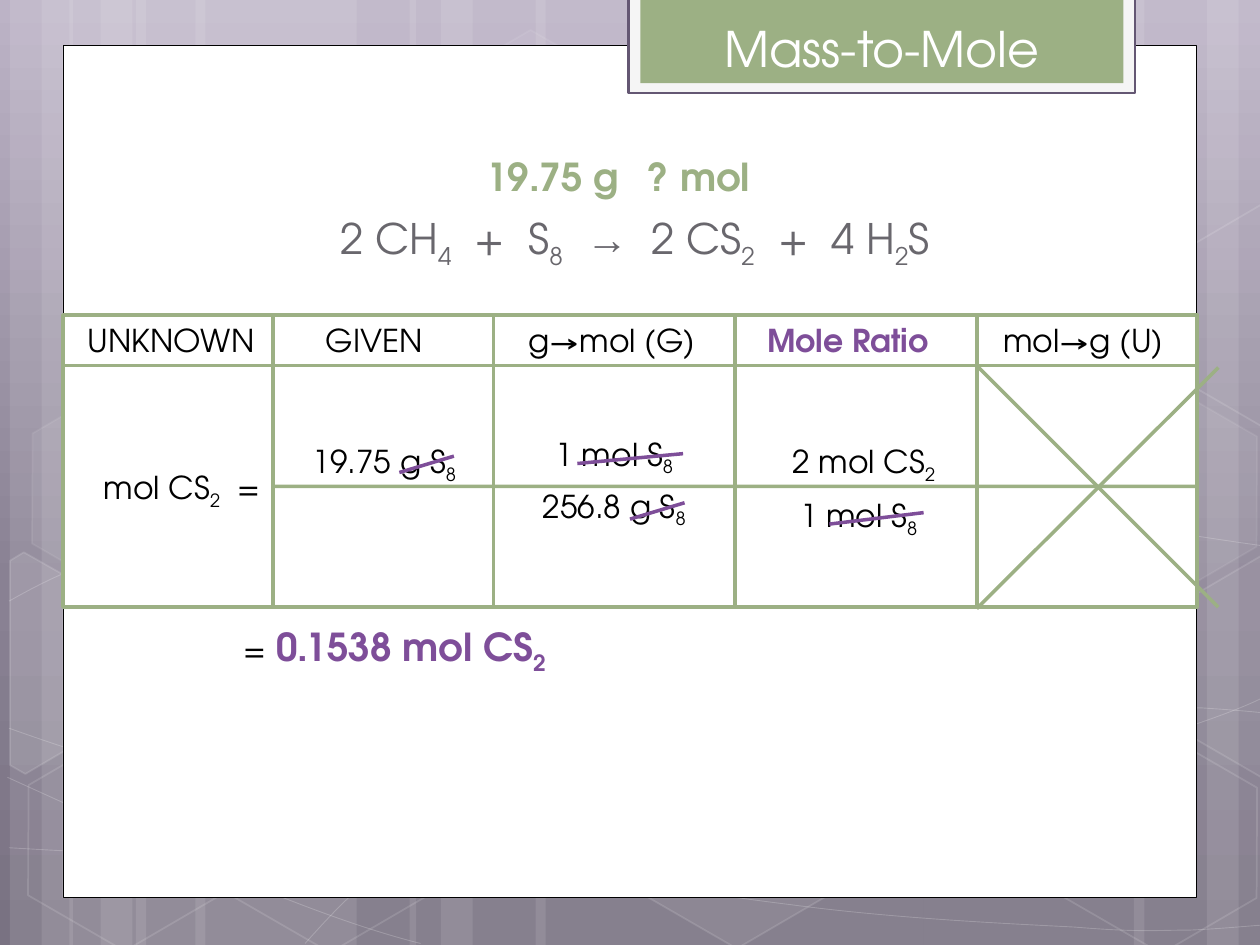
from copy import deepcopy
from math import cos, radians, sin
from pptx import Presentation
from pptx.dml.color import RGBColor
from pptx.enum.shapes import MSO_CONNECTOR, MSO_SHAPE as SHAPE
from pptx.enum.text import MSO_ANCHOR as ANCHOR, MSO_AUTO_SIZE as AUTO, PP_ALIGN as ALIGN
from pptx.oxml.ns import qn
from pptx.util import Cm, Pt
from lxml.etree import SubElement

FONT = "TeX Gyre Adventor"
GREEN, PURPLE, GREY, WHITE, BLACK = "9CB084", "7E4E99", "69676D", "FFFFFF", "000000"


def rgb(value):
    return RGBColor.from_string(value)


def set_alpha(fill, percent):
    color = fill._xPr.find(".//" + qn("a:srgbClr"))
    SubElement(color, qn("a:alpha"), val=str(percent * 1000))


def style(sp, fill=None, alpha=None, line=None, width=1, line_alpha=None):
    sp.shadow.inherit = False
    if fill:
        sp.fill.solid()
        sp.fill.fore_color.rgb = rgb(fill)
        if alpha:
            set_alpha(sp.fill, alpha)
    else:
        sp.fill.background()
    if line:
        sp.line.color.rgb = rgb(line)
        sp.line.width = Pt(width)
        if line_alpha:
            set_alpha(sp.line.fill, line_alpha)
    else:
        sp.line.fill.background()
    return sp


def add_box(s, x, y, w, h, kind=SHAPE.RECTANGLE, **fmt):
    return style(s.shapes.add_shape(kind, Cm(x), Cm(y), Cm(w), Cm(h)), **fmt)


def add_path(s, points, close=False, **fmt):
    points = [(Cm(x), Cm(y)) for x, y in points]
    builder = s.shapes.build_freeform(*points[0])
    builder.add_line_segments(points[1:], close=close)
    return style(builder.convert_to_shape(), **fmt)


def add_curve(s, points, **fmt):
    sp = add_path(s, points, **fmt)
    outline = sp._element.find(".//" + qn("a:path"))
    lines = outline.findall(qn("a:lnTo"))
    for i in range(0, len(lines), 3):
        curve = SubElement(outline, qn("a:cubicBezTo"))
        for line in lines[i:i + 3]:
            curve.append(line[0])
            outline.remove(line)


def add_turned(s, points, cx, cy, angle=30, **fmt):
    c, n = cos(radians(angle)), sin(radians(angle))
    level = [(cx + (x - cx) * c + (y - cy) * n, cy - (x - cx) * n + (y - cy) * c) for x, y in points]
    add_path(s, level, close=True, **fmt).rotation = angle


def add_line(s, x1, y1, x2, y2, color=GREEN):
    line = s.shapes.add_connector(MSO_CONNECTOR.STRAIGHT, Cm(x1), Cm(y1), Cm(x2), Cm(y2))
    line.line.color.rgb = rgb(color)
    line.line.width = Pt(2)
    SubElement(line._element.spPr, qn("a:effectLst"))
    return line


def write(p, text, size=18, color=BLACK, bold=False, font=FONT):
    for i, part in enumerate(text.split("_")):
        if part:
            r = p.add_run()
            r.text = part
            r.font.size, r.font.bold, r.font.name = Pt(size), bold, font
            r.font.color.rgb = rgb(color)
            if i % 2:
                r.font._element.set("baseline", "-25000")


def add_text(s, x, y, w, h, text="", align=ALIGN.CENTER, **fmt):
    tf = s.shapes.add_textbox(Cm(x), Cm(y), Cm(w), Cm(h)).text_frame
    tf.word_wrap = True
    tf.auto_size = AUTO.SHAPE_TO_FIT_TEXT
    p = tf.paragraphs[0]
    p.alignment = align
    write(p, text, **fmt)
    return tf


def draw_gradient(s):
    fill = s.background.fill
    fill.gradient()
    fill.gradient_angle = 270
    first, last = fill.gradient_stops
    first.color.rgb, last.color.rgb = rgb("BCB3C6"), rgb("797282")
    first.position, last.position = 0, 1
    stops = s._element.find(".//" + qn("a:gsLst"))
    middle = deepcopy(stops[0])
    middle.set("pos", "62000")
    middle[0].set("val", "898193")
    stops.insert(1, middle)


def draw_backdrop(s, height):
    bars = [(2.74, 4.45), (0.2, 1.27), (0.84, 2.11), (3.94, 4.45), (1.4, 1.27), (2.03, 2.11),
            (18.62, 4.45), (24.33, 1.27), (22.86, 2.11), (10.8, 7.82), (8.26, 1.27), (8.89, 2.11)]
    for x, w in bars:
        add_box(s, x, 0, w, height, fill=WHITE, alpha=10)

    curves = [
        [(0.18, 17.09), (1.55, 17.17), (2.92, 17.25), (4.83, 17.22), (6.73, 17.2), (9.09, 17.15),
         (11.63, 16.89), (14.17, 16.64), (17.78, 16.15), (20.12, 15.67), (22.43, 15.19),
         (24.82, 14.43), (25.58, 14)],
        [(0.18, 12.12), (0.91, 11.71), (1.65, 11.33), (3.07, 10.95), (4.52, 10.57), (6.58, 9.98),
         (8.81, 9.83), (11.07, 9.68), (13.82, 9.63), (16.61, 9.83), (19.41, 10.03),
         (24.05, 10.82), (25.58, 11.02)],
        [(0.15, 15.67), (3.23, 17.07), (6.27, 18.47), (8.48, 19.02)],
        [(0.18, 14.68), (0.97, 14.96), (1.78, 15.24), (3.25, 15.65), (4.72, 16.03), (6.93, 16.66),
         (9.07, 17.09), (11.18, 17.53), (13.84, 17.98), (15.95, 18.24), (18.06, 18.52),
         (20.32, 18.62), (21.67, 18.69), (22.99, 18.8), (23.34, 18.75), (24, 18.75),
         (24.66, 18.72), (25.12, 18.67), (25.58, 18.64)],
        [(6.15, 19.02), (6.6, 18.52), (7.06, 18.01), (7.67, 17.55), (8.28, 17.09), (9.14, 16.59),
         (9.86, 16.23), (10.57, 15.88), (11, 15.72), (11.94, 15.47), (12.85, 15.21),
         (14.55, 14.86), (15.44, 14.68), (16.36, 14.5), (16.48, 14.5), (17.27, 14.45),
         (18.03, 14.38), (19.3, 14.3), (20.17, 14.27), (21.06, 14.25), (22.5, 14.27),
         (24.21, 14.27), (24.66, 14.3), (25.1, 14.33), (25.55, 14.38)],
    ]
    for points in curves:
        add_curve(s, points, line=WHITE, width=0.5, line_alpha=20)

    hexagons = [(8.48, 0.91, 4, 8), (12.62, 14.96, 6, 12), (0.28, 15.01, None, 12),
                (0.36, 7.92, 7, 8), (4.42, 15.04, None, 12), (19.13, 11.51, 10, 12),
                (21.18, 15.06, None, 12), (21.18, 7.98, 7, 8)]
    for x, y, alpha, line_alpha in hexagons:
        sp = add_box(s, x, y, 4.45, 3.86, SHAPE.HEXAGON, fill=WHITE if alpha else None,
                     alpha=alpha, line=WHITE, line_alpha=line_alpha)
        sp.adjustments[0] = 0.285
        sp.rotation = 30

    left = [(0.2, 11.3), (0.48, 11.13), (2.44, 12.24), (2.41, 14.48), (0.51, 15.6), (0.2, 15.42)]
    right = [(23.52, 12.32), (25.43, 11.2), (25.63, 11.33), (25.63, 15.57), (25.45, 15.67), (23.52, 14.55)]
    upper = [(x, y - 7.08) for x, y in right]
    for points, cx, cy, alpha in ((left, 0.91, 13.59, 10), (right, 25.02, 13.21, 4),
                                  (upper, 25.02, 6.13, None)):
        add_turned(s, points, cx, cy, fill=WHITE if alpha else None, alpha=alpha,
                   line=WHITE, line_alpha=12)


def draw_title(s, x, y, w, h):
    add_box(s, x, y, w, h, fill="F5F5F5", line="645773", width=1.25)
    add_box(s, x + 0.24, y, w - 0.48, h - 0.2, fill=GREEN)
    title = s.shapes.title
    title.left, title.top, title.width, title.height = Cm(x + 0.24), Cm(y + 0.3), Cm(w - 0.48), Cm(1.45)
    s.shapes._spTree.append(title._element)
    tf = title.text_frame
    tf.vertical_anchor = ANCHOR.TOP
    tf.auto_size = AUTO.NONE
    p = tf.paragraphs[0]
    p.alignment = ALIGN.CENTER
    write(p, "Mass-to-Mole", size=28, color=WHITE)


def draw_equation(s, x, y, w):
    add_text(s, x + 5.98, y, 3.96, 1.19, "19.75 g", size=22, color=GREEN, bold=True)
    add_text(s, x + 9.54, y, 2.74, 1.19, "? mol", size=22, color=GREEN, bold=True)
    p = add_text(s, x, y + 1.19, w, 1.27, "2 CH_4_  +  S_8_  ", size=24, color=GREY).paragraphs[0]
    write(p, "→", size=24, color=GREY, font="Times New Roman")
    write(p, "  2 CS_2_  +  4 H_2_S ", size=24, color=GREY)


def draw_grid(s, x, y, w, head, body):
    mid, bottom = y + head + body / 2, y + head + body
    grid = add_box(s, x, y + head, w, body, line=GREEN, width=2)
    tf = add_box(s, x, y, w, head, line=GREEN, width=2).text_frame
    p = tf.paragraphs[0]
    p.alignment = ALIGN.LEFT
    tabs = SubElement(p._p.get_or_add_pPr(), qn("a:tabLst"))
    for pos in (1.93, 6.02, 10.82, 15.57, 20.32):
        SubElement(tabs, qn("a:tab"), pos=str(Cm(pos)), algn="ctr")
    write(p, "\tUNKNOWN\tGIVEN\tg→mol (G)\t")
    write(p, "Mole Ratio\t", color=PURPLE, bold=True)
    write(p, "mol→g (U)")

    for col, drop in ((4.23, 0), (18.42, 0), (13.55, 0), (8.68, 0.04)):
        add_line(s, x + col, y + drop, x + col, bottom + drop)
    add_line(s, x + 4.23, mid, x + w, mid).end_connect(grid, 3)

    add_text(s, x, mid - 0.49, 4.23, 1.02, "mol CS_2_  =", ALIGN.RIGHT)
    cells = [(3.94, -1.01, 5.08, "19.75 g S_8_"), (8.89, -1.17, 4.45, "1 mol S_8_"),
             (8.89, -0.12, 4.45, "256.8 g S_8_"), (13.87, -1.01, 4.55, "2 mol CS_2_"),
             (13.87, 0.07, 4.34, "1 mol S_8_")]
    for dx, dy, width, text in cells:
        add_text(s, x + dx, mid + dy, width, 1.02, text)

    for y1, y2 in ((y + head, bottom), (bottom + 0.03, y + head + 0.04)):
        add_line(s, x + 18.42, y1, x + 23.29, y2)
    strikes = [(6.78, -0.28, 1.1, 0.33), (10.37, -0.46, 2.13, 0.2),
               (11.43, 0.66, 1.1, 0.33), (15.45, 0.76, 1.9, 0.23)]
    for dx, dy, run, rise in strikes:
        add_line(s, x + dx, mid + dy, x + dx + run, mid + dy - rise, PURPLE)


def draw_answer(s, x, y, w, h):
    tf = add_text(s, x, y, w, h, "=", ALIGN.LEFT)
    tf.margin_top = tf.margin_bottom = Cm(0.25)
    p = tf.paragraphs[0]
    p.space_before = p.space_after = Pt(12)
    write(p, " ", size=22)
    write(p, "0.1538 mol CS_2_", size=22, color=PURPLE, bold=True)


def main():
    prs = Presentation()
    prs.slide_width, prs.slide_height = Cm(25.4), Cm(19.05)
    s = prs.slides.add_slide(prs.slide_layouts[5])
    draw_gradient(s)
    draw_backdrop(s, 19.05)
    add_box(s, 1.27, 0.91, 22.86, 17.19, fill=WHITE, line=BLACK, width=0.5)
    draw_title(s, 12.67, -0.05, 10.22, 1.93)
    draw_equation(s, 3.18, 2.97, 19.48)
    draw_grid(s, 1.27, 6.35, 22.86, 1.02, 4.87)
    draw_answer(s, 4.65, 12.32, 6.78, 1.45)
    prs.save("out.pptx")


if __name__ == "__main__":
    main()
